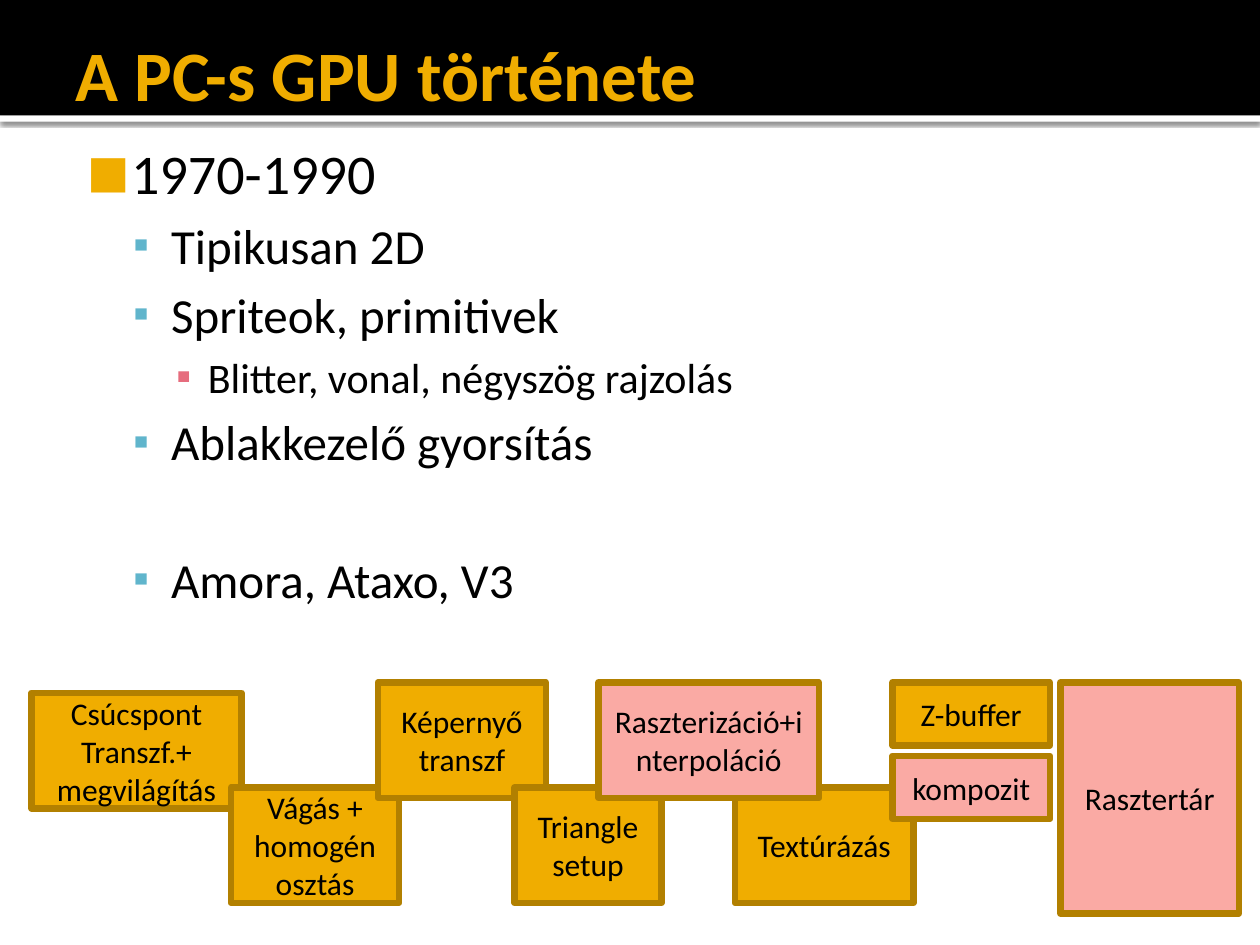
from dataclasses import dataclass
from lxml.etree import SubElement as Sub
from pptx import Presentation
from pptx.dml.color import RGBColor as Rgb
from pptx.enum.shapes import MSO_SHAPE as Shape
from pptx.enum.text import MSO_ANCHOR as Anchor, MSO_AUTO_SIZE as Auto, PP_ALIGN as Align
from pptx.oxml.ns import qn
from pptx.util import Emu, Pt

PX = 7620


@dataclass(frozen=True)
class Theme:
    font: str = "Calibri"
    ink: str = "000000"
    paper: str = "FFFFFF"
    gold: str = "F0AD00"
    pink: str = "FAAAA4"
    edge: str = "B28000"
    blue: str = "60B5CC"
    rose: str = "E66C7D"
    head: float = 40.5
    sizes: tuple = (32, 28, 24)
    label: int = 18
    line: float = 3.78


T = Theme()
LEVELS = (
    dict(mark="■", tint=T.gold, pct=80, left=58, hang=42),
    dict(mark="▪", tint=T.blue, pct=90, left=96, hang=36),
    dict(mark="▪", tint=T.rose, pct=100, left=131, hang=30),
)
POINTS = (
    (0, "1970-1990", 0),
    (1, "Tipikusan 2D", 5.6),
    (1, "Spriteok, primitivek", 5.6),
    (2, "Blitter, vonal, négyszög rajzolás", 4.8),
    (1, "Ablakkezelő gyorsítás", 5.6),
    (1, "Amora, Ataxo, V3", 45),
)
TOP, LOW, TALL, HALF = 650, 750, 110, 60
STAGES = (
    ("Csúcspont\nTranszf.+ megvilágítás", 30, TOP + 10, 200, TALL, T.gold),
    ("Vágás + homogén osztás", 220, LOW, 160, TALL, T.gold),
    ("Képernyő transzf", 360, TOP, 160, TALL, T.gold),
    ("Textúrázás", 700, LOW, 170, TALL, T.gold),
    ("Z-buffer", 850, TOP, 150, HALF, T.gold),
    ("kompozit", 850, TOP + 70, 150, HALF, T.pink),
    ("Rasztertár", 1010, TOP, 170, 2 * TALL, T.pink),
    ("Triangle setup", 490, LOW, 140, TALL, T.gold),
    ("Raszterizáció+interpoláció", 570, TOP, 210, TALL, T.pink),
)


def px(*nums):
    """Turn whole pixels into EMU."""
    return [Emu(num * PX) for num in nums]


def put(obj, vals):
    """Set each named attribute on an object."""
    for key, val in vals.items():
        setattr(obj, key, val)


def style(para, size, ink=T.ink, bold=False):
    """Give the runs of a paragraph their type."""
    for run in para.runs:
        put(run.font, dict(name=T.font, size=Pt(size), bold=bold))
        run.font.color.rgb = Rgb.from_string(ink)


def frame(shape, pads, anchor):
    """Set up the text frame of a shape."""
    names = ("margin_left", "margin_top", "margin_right", "margin_bottom")
    text = shape.text_frame
    put(text, dict(zip(names, px(*pads)), word_wrap=True,
                   auto_size=Auto.NONE, vertical_anchor=anchor))
    return text


def block(slide, at, fill, edge=None):
    """Add a flat rectangle."""
    shape = slide.shapes.add_shape(Shape.RECTANGLE, *px(*at))
    shape.shadow.inherit = False
    shape.fill.solid()
    shape.fill.fore_color.rgb = Rgb.from_string(fill)
    if edge:
        shape.line.color.rgb = Rgb.from_string(edge)
        shape.line.width = Pt(T.line)
    else:
        shape.line.fill.background()
    return shape


def shade(shape):
    """Cast a soft shadow below a shape."""
    list_ = shape.element.spPr.find(qn("a:effectLst"))
    cast = Sub(list_, qn("a:outerShdw"), blurRad=str(Pt(2.5)),
               dist=str(Pt(0.8)), dir="5400000", algn="tl", rotWithShape="0")
    tint = Sub(cast, qn("a:srgbClr"), val=T.ink)
    Sub(tint, qn("a:alpha"), val="60000")


def title(slide, words):
    """Place the title over the dark band."""
    shape = slide.shapes.title
    put(shape, dict(zip(("left", "top", "width", "height"), px(60, 20, 1080, 100))))
    text = frame(shape, (12, 6, 6, 6), Anchor.MIDDLE)
    text.text = words
    para = text.paragraphs[0]
    para.alignment = Align.LEFT
    style(para, T.head, T.gold, True)
    slide.shapes.element.append(shape.element)


def bullet(para, mark, tint, pct, left, hang):
    """Give a paragraph its mark and hanging indent."""
    prop = para._p.get_or_add_pPr()
    prop.set("marL", str(left * PX))
    prop.set("indent", str(-hang * PX))
    Sub(Sub(prop, qn("a:buClr")), qn("a:srgbClr"), val=tint)
    Sub(prop, qn("a:buSzPct"), val=str(pct * 1000))
    Sub(prop, qn("a:buFont"), typeface=T.font)
    Sub(prop, qn("a:buChar"), char=mark)


def outline(slide):
    """Add the bulleted list."""
    box = slide.shapes.add_textbox(*px(60, 120, 1080, 720))
    text = frame(box, (7, 12, 12, 6), Anchor.TOP)
    for num, (level, words, gap) in enumerate(POINTS):
        para = text.add_paragraph() if num else text.paragraphs[0]
        put(para, dict(text=words, level=level, space_before=Pt(gap)))
        bullet(para, **LEVELS[level])
        style(para, T.sizes[level])


def stage(slide, words, left, top, wide, high, fill):
    """Add one labelled pipeline stage."""
    shape = block(slide, (left, top, wide, high), fill, T.edge)
    text = frame(shape, (12, 6, 12, 6), Anchor.MIDDLE)
    text.text = words
    for para in text.paragraphs:
        para.alignment = Align.CENTER
        style(para, T.label)


def main():
    """Build and save the slide."""
    deck = Presentation()
    put(deck, dict(zip(("slide_width", "slide_height"), px(1200, 900))))
    slide = deck.slides.add_slide(deck.slide_layouts[5])
    shade(block(slide, (0, 110, 1200, 6), T.paper))
    block(slide, (0, 0, 1200, 110), T.ink)
    title(slide, "A PC-s GPU története")
    outline(slide)
    for item in STAGES:
        stage(slide, *item)
    deck.save("out.pptx")


if __name__ == "__main__":
    main()
